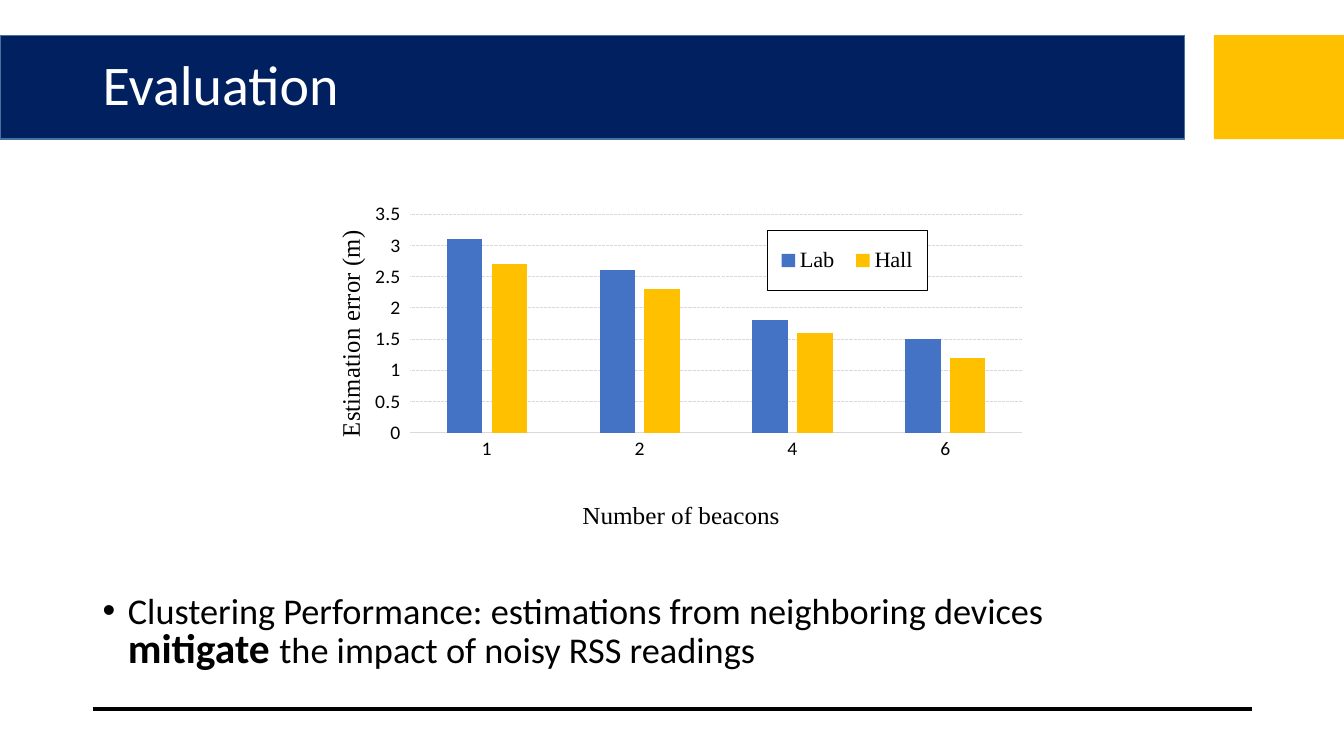
from typing import Any, NamedTuple, Optional

import lxml.etree
import pptx
import pptx.chart.data
import pptx.dml.color
import pptx.enum.chart
import pptx.enum.dml
import pptx.enum.shapes
import pptx.enum.text
import pptx.oxml
import pptx.oxml.ns
import pptx.util

Inches = pptx.util.Inches
Pt = pptx.util.Pt
qn = pptx.oxml.ns.qn

BLACK, WHITE, NAVY, GOLD = "000000", "FFFFFF", "002060", "FFC000"
BLUE, GREY, EDGE = "4472C4", "D9D9D9", "43739E"
SANS, SERIF = "Calibri", "Times New Roman"
LEFT, BAND_TOP, BAND_HEIGHT = 0.92, 0.35, 1.03

class Box(NamedTuple):
    left: float
    top: float
    width: float
    height: float

class Band(NamedTuple):
    box: Box
    fill: str
    edge: Optional[str] = None

class Run(NamedTuple):
    text: str
    size: float
    color: str = BLACK
    bold: bool = False

class Series(NamedTuple):
    name: str
    values: tuple
    color: str

class AxisTitle(NamedTuple):
    text: str
    left: float
    top: float
    rotation: int

BANDS = [
    Band(Box(0, BAND_TOP, 11.75, BAND_HEIGHT), NAVY, EDGE),
    Band(Box(12.04, BAND_TOP, 1.29, BAND_HEIGHT), GOLD),
]
SERIES = [
    Series("Lab", (3.1, 2.6, 1.8, 1.5), BLUE),
    Series("Hall", (2.7, 2.3, 1.6, 1.2), GOLD),
]
CATEGORY_TITLE = AxisTitle("Number of beacons", 0.37, 0.9, 0)
VALUE_TITLE = AxisTitle("Estimation error (m)", 0.03, 0.1, -5400000)
HEADING = [Run("Evaluation", 40, WHITE)]
FINDING = [
    Run("Clustering Performance: estimations from neighboring devices ", 25.9),
    Run("mitigate ", 29.6, bold=True),
    Run("the impact of noisy RSS readings", 25.9),
]

def rgb(color: str) -> pptx.dml.color.RGBColor:
    return pptx.dml.color.RGBColor.from_string(color)

def apply(target: Any, formats: dict) -> None:
    for name, value in formats.items():
        setattr(target, name, value)

def style_font(font: Any, name: str, size: float, color: str = BLACK, bold: bool = False) -> None:
    apply(font, {"name": name, "size": Pt(size), "bold": bold})
    font.color.rgb = rgb(color)

def style_line(line: Any, color: str, width: float) -> None:
    line.color.rgb = rgb(color)
    line.width = Pt(width)

def style_fill(fill: Any, color: str) -> None:
    fill.solid()
    fill.fore_color.rgb = rgb(color)

def add_band(slide: Any, band: Band) -> None:
    shape = slide.shapes.add_shape(pptx.enum.shapes.MSO_SHAPE.RECTANGLE, *map(Inches, band.box))
    shape.shadow.inherit = False
    style_fill(shape.fill, band.fill)
    if band.edge:
        style_line(shape.line, band.edge, 1)
    else:
        shape.line.fill.background()

def add_rule(slide: Any, left: float, right: float, top: float) -> None:
    rule = slide.shapes.add_connector(
        pptx.enum.shapes.MSO_CONNECTOR.STRAIGHT, *map(Inches, (left, top, right, top)))
    style_line(rule.line, BLACK, 3)
    lxml.etree.SubElement(rule._element.spPr, qn("a:effectLst"))

def add_text(slide: Any, box: Box, runs: list, anchor: Any, spacing: float,
             bulleted: bool = False) -> None:
    frame = slide.shapes.add_textbox(*map(Inches, box)).text_frame
    apply(frame, {"word_wrap": True, "vertical_anchor": anchor})
    paragraph = frame.paragraphs[0]
    paragraph.line_spacing = spacing
    if bulleted:
        properties = paragraph._p.get_or_add_pPr()
        properties.set("marL", str(Inches(0.25)))
        properties.set("indent", str(Inches(-0.25)))
        lxml.etree.SubElement(properties, qn("a:buFont"), typeface="Arial")
        lxml.etree.SubElement(properties, qn("a:buChar"), char="•")
    for item in runs:
        run = paragraph.add_run()
        run.text = item.text
        style_font(run.font, SANS, item.size, item.color, item.bold)

def place(element: Any, **fractions: float) -> None:
    """Give a chart part a manual layout in fractions of the chart's size."""
    for old in element.findall(qn("c:layout")):
        element.remove(old)
    layout = lxml.etree.Element(qn("c:layout"))
    manual = lxml.etree.SubElement(layout, qn("c:manualLayout"))
    overlay = element.find(qn("c:overlay"))
    if overlay is None:
        element.insert(0, layout)
        lxml.etree.SubElement(manual, qn("c:layoutTarget"), val="inner")
    else:
        overlay.addprevious(layout)
    settings = {"xMode": "edge", "yMode": "edge", **fractions}
    for name, value in settings.items():
        lxml.etree.SubElement(manual, qn("c:" + name), val=str(value))

def style_axis(axis: Any, title: AxisTitle, tick_mark: Any) -> None:
    axis.major_tick_mark = tick_mark
    style_font(axis.tick_labels.font, SANS, 14)
    frame = axis.axis_title.text_frame
    frame.text = title.text
    style_font(frame.paragraphs[0].runs[0].font, SERIF, 18)
    element = axis.axis_title._element
    body = element.find(".//" + qn("a:bodyPr"))
    body.set("rot", str(title.rotation))
    body.set("vert", "horz")
    place(element, x=title.left, y=title.top)

def style_legend(chart: Any) -> None:
    chart.has_legend = True
    legend = chart.legend
    apply(legend, {"position": pptx.enum.chart.XL_LEGEND_POSITION.RIGHT,
                   "include_in_layout": True})
    style_font(legend.font, SERIF, 16)
    place(legend._element, x=0.63, y=0.1, w=0.22, h=0.18)
    legend._element.find(qn("c:txPr")).addprevious(pptx.oxml.parse_xml(
        f'<c:spPr {pptx.oxml.ns.nsdecls("c", "a")}>'
        f'<a:solidFill><a:srgbClr val="{WHITE}"/></a:solidFill><a:ln w="9525"><a:solidFill>'
        f'<a:srgbClr val="{BLACK}"/></a:solidFill></a:ln></c:spPr>'))

def add_error_chart(slide: Any, box: Box) -> None:
    data = pptx.chart.data.CategoryChartData()
    data.categories = ["1", "2", "4", "6"]
    for series in SERIES:
        data.add_series(series.name, series.values)
    chart = slide.shapes.add_chart(
        pptx.enum.chart.XL_CHART_TYPE.COLUMN_CLUSTERED, *map(Inches, box), data).chart
    chart.has_title = False
    style_font(chart.font, SANS, 10)
    plot = chart.plots[0]
    apply(plot, {"gap_width": 206, "overlap": -27, "vary_by_categories": False})
    for drawn, series in zip(plot.series, SERIES):
        style_fill(drawn.format.fill, series.color)
    ticks = pptx.enum.chart.XL_TICK_MARK
    style_axis(chart.category_axis, CATEGORY_TITLE, ticks.NONE)
    style_line(chart.category_axis.format.line, GREY, 0.75)
    value_axis = chart.value_axis
    style_axis(value_axis, VALUE_TITLE, ticks.OUTSIDE)
    apply(value_axis, {"minimum_scale": 0, "maximum_scale": 3.5, "major_unit": 0.5})
    value_axis.format.line.fill.background()
    grid = value_axis.major_gridlines.format.line
    style_line(grid, GREY, 0.75)
    grid.dash_style = pptx.enum.dml.MSO_LINE.SQUARE_DOT
    place(plot._element.getparent(), x=0.14, y=0.05, w=0.84, h=0.66)
    style_legend(chart)

def main() -> None:
    presentation = pptx.Presentation()
    apply(presentation, {"slide_width": Inches(13.33), "slide_height": Inches(7.5)})
    slide = presentation.slides.add_slide(presentation.slide_layouts[6])
    anchors = pptx.enum.text.MSO_ANCHOR
    for band in BANDS:
        add_band(slide, band)
    add_rule(slide, LEFT, 12.42, 7.03)
    add_text(slide, Box(LEFT, BAND_TOP, 11.5, BAND_HEIGHT), HEADING, anchors.MIDDLE, 0.9)
    add_text(slide, Box(LEFT, 5.87, 10.97, 0.86), FINDING, anchors.TOP, 0.8, bulleted=True)
    add_error_chart(slide, Box(3.06, 1.96, 7.22, 3.37))
    presentation.save("out.pptx")

if __name__ == "__main__":
    main()
